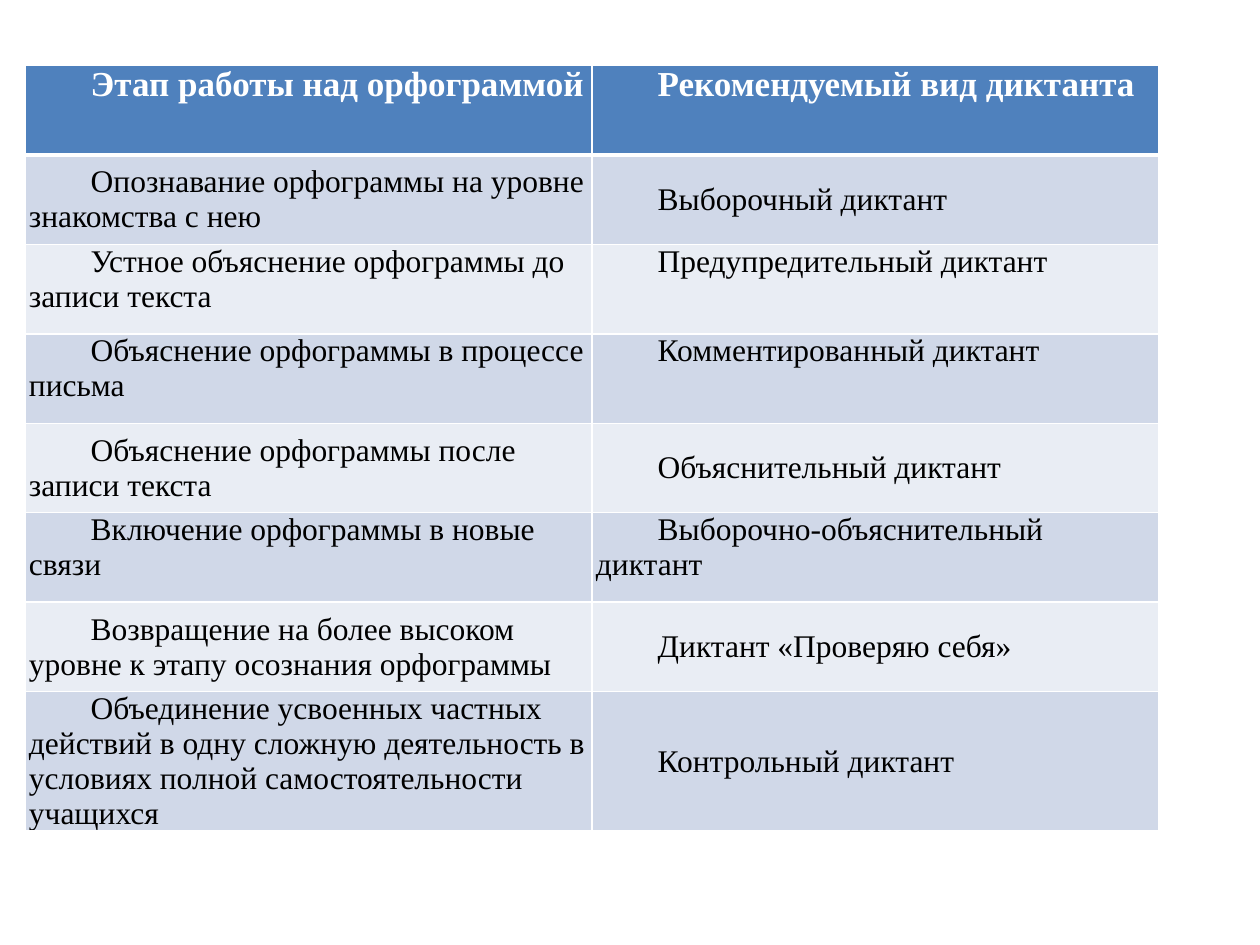
from lxml.etree import SubElement
from pptx import Presentation
from pptx.dml.color import RGBColor
from pptx.enum.text import MSO_ANCHOR as Anchor, PP_ALIGN as Align
from pptx.oxml.ns import qn
from pptx.util import Inches, Pt

HEADER = ("Этап работы над орфограммой", "Рекомендуемый вид диктанта")
# stage, dictation, vertical anchor
STAGES = [
    ("Опознавание орфограммы на уровне знакомства с нею",
     "Выборочный диктант", Anchor.MIDDLE),
    ("Устное объяснение орфограммы до записи текста",
     "Предупредительный диктант", Anchor.TOP),
    ("Объяснение орфограммы в процессе письма",
     "Комментированный диктант", Anchor.TOP),
    ("Объяснение орфограммы после записи текста",
     "Объяснительный диктант", Anchor.MIDDLE),
    ("Включение орфограммы в новые связи",
     "Выборочно-объяснительный диктант", Anchor.TOP),
    ("Возвращение на более высоком уровне к этапу осознания орфограммы",
     "Диктант «Проверяю себя»", Anchor.MIDDLE),
    ("Объединение усвоенных частных действий в одну сложную деятельность "
     "в условиях полной самостоятельности учащихся",
     "Контрольный диктант", Anchor.MIDDLE),
]
COLORS = {"header": "4F81BD", "odd": "D0D8E8", "even": "E9EDF4",
          "border": "FFFFFF", "header_text": "FFFFFF", "text": "000000"}
HEADER_FONT = {"name": "Times New Roman", "size": Pt(20), "bold": True}
BODY_FONT = {"name": "Times New Roman", "size": Pt(18), "bold": False}
CELL_MARGINS = {"margin_left": Inches(0.03), "margin_right": Inches(0.03),
                "margin_top": 0, "margin_bottom": 0}
LEFT, TOP, COLUMN_WIDTH, ROW_HEIGHT = 0.2, 0.52, 4.5, 0.71
FIRST_LINE_INDENT = Inches(0.49)


def set_attributes(target, values):
    for key, value in values.items():
        setattr(target, key, value)


def add_borders(cell, widths):
    """Draw cell borders; call before filling, as the schema wants lines first."""
    properties = cell._tc.get_or_add_tcPr()
    for side, width in widths.items():
        line = SubElement(properties, qn(f"a:ln{side}"), w=str(Pt(width)))
        solid = SubElement(line, qn("a:solidFill"))
        SubElement(solid, qn("a:srgbClr"), val=COLORS["border"])


def fill_cell(cell, text, font, text_color, fill_color, anchor, align, borders):
    add_borders(cell, borders)
    cell.fill.solid()
    cell.fill.fore_color.rgb = RGBColor.from_string(COLORS[fill_color])
    set_attributes(cell, CELL_MARGINS | {"vertical_anchor": anchor})
    paragraph = cell.text_frame.paragraphs[0]
    paragraph.alignment = align
    paragraph._p.get_or_add_pPr().set("indent", str(FIRST_LINE_INDENT))
    run = paragraph.add_run()
    run.text = text
    set_attributes(run.font, font)
    run.font.color.rgb = RGBColor.from_string(COLORS[text_color])


def main():
    prs = Presentation()
    prs.slide_width, prs.slide_height = Inches(10), Inches(7.5)
    slide = prs.slides.add_slide(prs.slide_layouts[6])
    row_count, column_count = len(STAGES) + 1, len(HEADER)
    table = slide.shapes.add_table(
        row_count, column_count, Inches(LEFT), Inches(TOP),
        Inches(COLUMN_WIDTH * column_count), Inches(ROW_HEIGHT * row_count)).table
    for column in table.columns:
        column.width = Inches(COLUMN_WIDTH)
    for row in table.rows:
        row.height = Inches(ROW_HEIGHT)

    for column, title in enumerate(HEADER):
        fill_cell(table.cell(0, column), title, HEADER_FONT, "header_text", "header",
                  Anchor.TOP, Align.JUSTIFY, {"L": 1, "R": 1, "T": 1, "B": 3})
    for row, (stage, dictation, anchor) in enumerate(STAGES, start=1):
        band = "odd" if row % 2 else "even"
        borders = {"L": 1, "R": 1, "T": 3 if row == 1 else 1, "B": 1}
        for column, text in enumerate((stage, dictation)):
            fill_cell(table.cell(row, column), text, BODY_FONT, "text", band,
                      anchor, Align.LEFT, borders)
    prs.save("out.pptx")


if __name__ == "__main__":
    main()
